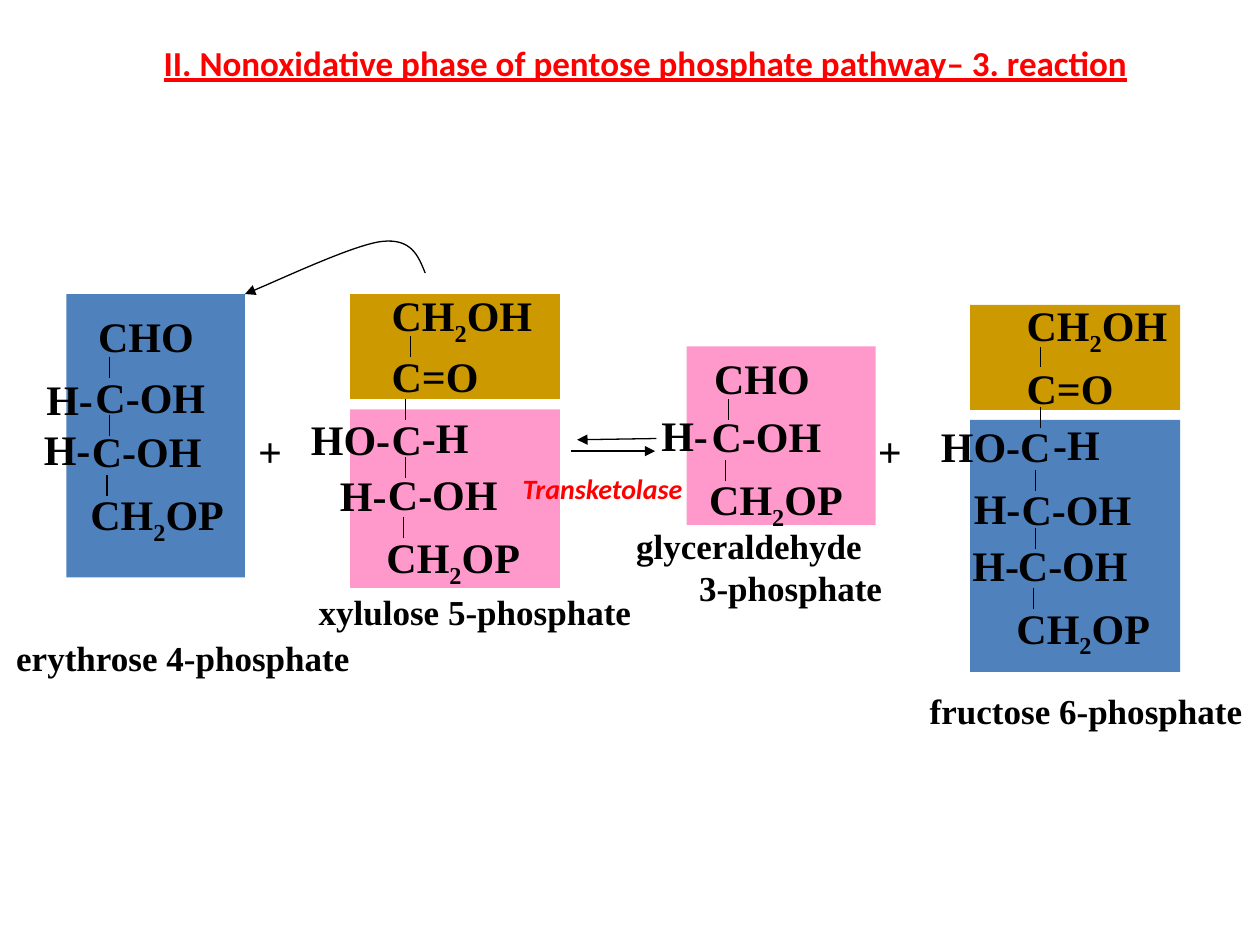
from lxml import etree
from pptx import Presentation
from pptx.dml.color import RGBColor
from pptx.enum.shapes import MSO_CONNECTOR, MSO_SHAPE
from pptx.oxml.ns import qn
from pptx.util import Pt

RECTANGLE = MSO_SHAPE.RECTANGLE
STRAIGHT = MSO_CONNECTOR.STRAIGHT

BLACK, RED = "000000", "FF0000"
PINK, BLUE, GOLD = "FF99CC", "4F81BD", "CC9900"

# Text formats
SERIF = {"name": "Times New Roman", "bold": True}
FORMULA = {**SERIF, "size": Pt(24)}
LABEL = {**SERIF, "size": Pt(20)}
TITLE = {"name": "Calibri", "size": Pt(20), "bold": True, "underline": True}
ENZYME = {"name": "Calibri", "size": Pt(16), "bold": True, "italic": True}

# Box width of each formula group; side groups sit in wrapping boxes
GROUP_WIDTHS = {"CHO": 69, "C-OH": 77, "CH2OP": 91.4, "CH2OH": 95.8, "C=O": 64,
                "C": 31.7, "HO-": 59.8, "HO-C": 77, "H-": 45, "-H": 45, "+": 28}
SIDE_GROUPS = ("H-", "-H")
GROUP_HEIGHT = 36
BOND_LENGTH = 12

# Blocks: color, left, top, width, height; groups: text, left, top; bonds: x, top
MOLECULES = {
    "erythrose 4-phosphate": {
        "blocks": [(BLUE, 38, 168, 102, 162)],
        "groups": [("CHO", 49, 174.2), ("H-", 19.4, 210), ("C-OH", 47.5, 208.8),
                   ("H-", 18, 238.3), ("C-OH", 45.4, 239.8), ("CH2OP", 44.6, 275.8)],
        "bonds": [(62.6, 203.8), (62.6, 236.9), (61.2, 271.4)],
        "label": (2.2, 360, 206.6, 31.7),
    },
    "xylulose 5-phosphate": {
        "blocks": [(GOLD, 200, 168, 120, 60), (PINK, 200, 234, 120, 102)],
        "groups": [("CH2OH", 216.7, 162), ("C=O", 216.7, 196.6),
                   ("HO-", 170.6, 232.6), ("C", 216.7, 232.6), ("-H", 234, 231.8),
                   ("H-", 187.2, 265), ("C-OH", 214.6, 264.2),
                   ("CH2OP", 213.8, 300.2)],
        "bonds": [(234.7, 192.2), (231.8, 228.2), (231.8, 261.4), (230.4, 295.2)],
        "label": (175, 334, 198.7, 31.7),
    },
    "glyceraldehyde\n\t3-phosphate": {
        "blocks": [(PINK, 392.4, 198, 108, 102)],
        "groups": [("CHO", 401, 198), ("H-", 370.8, 230.4), ("C-OH", 399.6, 231.1),
                   ("CH2OP", 398.2, 267.1)],
        "bonds": [(416.2, 228.2), (414.7, 262.8)],
        "label": (356.4, 296, 200, 55.4),
    },
    "fructose 6-phosphate": {
        "blocks": [(GOLD, 554.4, 174.2, 120, 60), (BLUE, 554.4, 240, 120, 144)],
        "groups": [("CH2OH", 579.6, 167.8), ("C=O", 579.6, 203.8),
                   ("HO-C", 530.6, 236.9), ("-H", 594.7, 235.4),
                   ("H-", 549.4, 272.2), ("C-OH", 576.7, 272.9),
                   ("H-", 548.6, 304.6), ("C-OH", 574.6, 304.6),
                   ("CH2OP", 573.8, 340.6)],
        "bonds": [(594.7, 198), (594.7, 232.6), (591.8, 268.6), (591.8, 301.7),
                  (590.4, 336.2)],
        "label": (524.2, 390.2, 194.4, 31.7),
    },
}
PLUS_SIGNS = [("+", 140.4, 239.8), ("+", 494.6, 239.8)]
REACTION_ARROWS = [(326.2, 257.8, 374.4, 257.8), (375.1, 250.6, 329.8, 251.3)]
CAPTIONS = [
    ("II. Nonoxidative phase of pentose phosphate pathway– 3. reaction",
     (86.4, 20.2, 565.2, 31.7), TITLE),
    ("Transketolase", (291.6, 265.7, 106.6, 26.6), ENZYME),
]
# Transfer arrow: start point, then two cubic curves of three points each
TRANSFER_CURVE = [(242.6, 156.2), (239, 146.2), (235.4, 136.1), (218.2, 138.2),
                  (201.6, 139.7), (153.4, 162.7), (140.4, 168)]


def color(value):
    return RGBColor.from_string(value)


def points(values):
    return [Pt(value) for value in values]


def add_block(slide, fill, *box):
    shape = slide.shapes.add_shape(RECTANGLE, *points(box))
    shape.shadow.inherit = False
    shape.fill.solid()
    shape.fill.fore_color.rgb = color(fill)
    shape.line.fill.background()


def add_text(slide, text, box, font_format, font_color=BLACK, wrap=False,
             subscripts=False):
    frame = slide.shapes.add_textbox(*points(box)).text_frame
    frame.word_wrap = wrap
    for index, line in enumerate(text.split("\n")):
        paragraph = frame.add_paragraph() if index else frame.paragraphs[0]
        before, digit, after = line.partition("2") if subscripts else (line, "", "")
        for part in filter(None, (before, digit, after)):
            run = paragraph.add_run()
            run.text = part
            for name, value in font_format.items():
                setattr(run.font, name, value)
            run.font.color.rgb = color(font_color)
            if part == digit:
                run.font._element.set("baseline", "-25000")


def add_group(slide, text, left, top):
    box = (left, top, GROUP_WIDTHS[text], GROUP_HEIGHT)
    add_text(slide, text, box, FORMULA, wrap=text in SIDE_GROUPS, subscripts=True)


def style_line(shape, arrow):
    shape.line.color.rgb = color(BLACK)
    shape.line.width = Pt(0.75)
    if arrow:
        line = shape.line._get_or_add_ln()
        etree.SubElement(line, qn("a:tailEnd"), type="triangle")


def add_line(slide, *ends, arrow=False):
    connector = slide.shapes.add_connector(STRAIGHT, *points(ends))
    style_line(connector, arrow)
    etree.SubElement(connector._element.spPr, qn("a:effectLst"))


def add_curved_arrow(slide, curve):
    builder = slide.shapes.build_freeform(*curve[0], scale=Pt(1))
    builder.add_line_segments(curve[1:], close=False)
    shape = builder.convert_to_shape()
    shape.shadow.inherit = False
    shape.fill.background()
    style_line(shape, arrow=True)
    # Turn each three line segments into one cubic curve
    segments = list(shape._element.iter(qn("a:lnTo")))
    for start in range(0, len(segments), 3):
        cubic = etree.Element(qn("a:cubicBezTo"))
        segments[start].addprevious(cubic)
        for segment in segments[start:start + 3]:
            cubic.append(segment[0])
            segment.getparent().remove(segment)


def main():
    presentation = Presentation()
    presentation.slide_width, presentation.slide_height = Pt(720), Pt(540)
    slide = presentation.slides.add_slide(presentation.slide_layouts[6])

    # Molecules: colored blocks, bonds, formula groups and name
    for name, molecule in MOLECULES.items():
        for block in molecule["blocks"]:
            add_block(slide, *block)
        for x, top in molecule["bonds"]:
            add_line(slide, x, top, x, top + BOND_LENGTH)
        for group in molecule["groups"]:
            add_group(slide, *group)
        add_text(slide, name, molecule["label"], LABEL, wrap="\n" in name)

    # Reaction signs and arrows
    for sign in PLUS_SIGNS:
        add_group(slide, *sign)
    for arrow in REACTION_ARROWS:
        add_line(slide, *arrow, arrow=True)
    add_curved_arrow(slide, TRANSFER_CURVE)

    # Title and enzyme
    for text, box, font_format in CAPTIONS:
        add_text(slide, text, box, font_format, RED)

    presentation.save("out.pptx")


if __name__ == "__main__":
    main()
